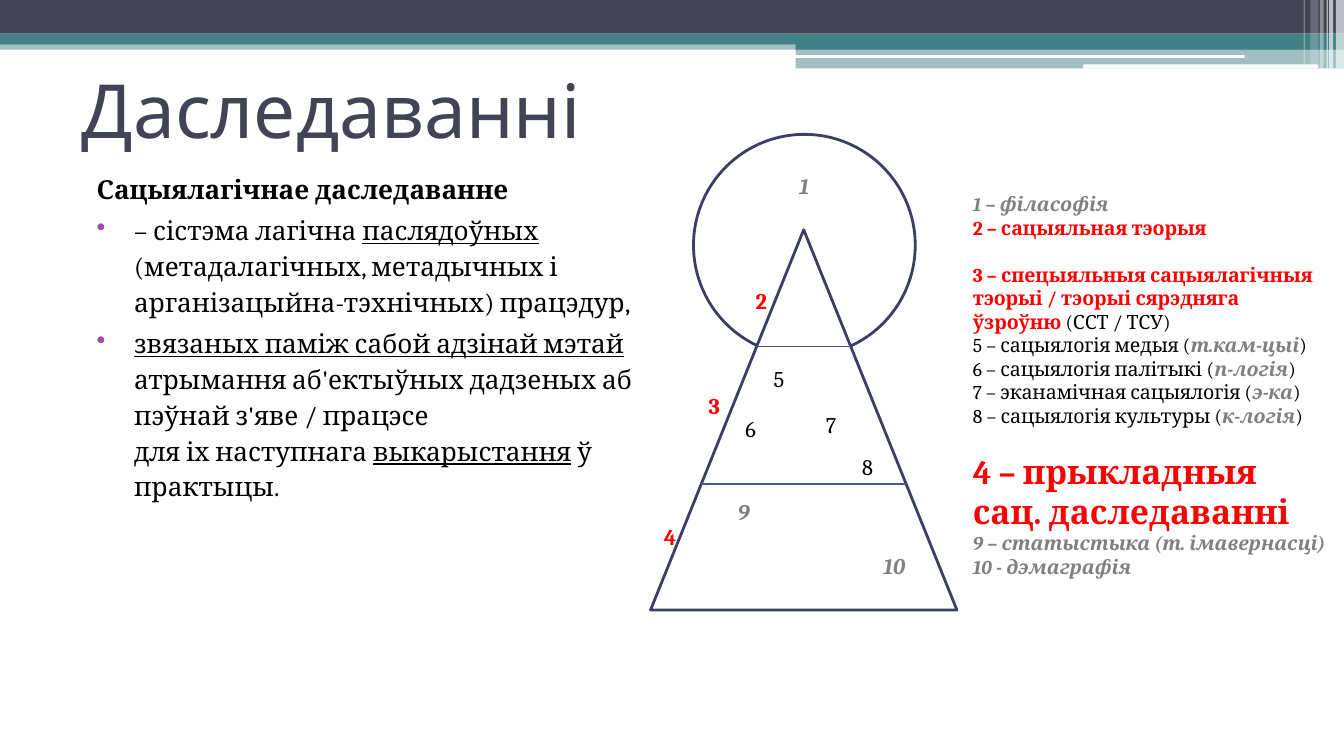
from dataclasses import dataclass
from typing import NamedTuple

from lxml.etree import SubElement
from pptx import Presentation
from pptx.dml.color import RGBColor
from pptx.enum.shapes import MSO_CONNECTOR, MSO_SHAPE
from pptx.enum.text import MSO_ANCHOR, MSO_AUTO_SIZE, PP_ALIGN
from pptx.oxml.ns import qn
from pptx.util import Emu, Inches, Pt

WIDTH = Inches(10)
HEIGHT = Emu(WIDTH * 9 // 16)
CELL = WIDTH / 100  # the grid has 100 columns of square cells


@dataclass(frozen=True)
class Theme:
    dark: str = "424456"
    teal: str = "438086"
    white: str = "FFFFFF"
    outline: str = "3D3E66"
    divider: str = "53548A"
    bullet: str = "A04DA3"
    black: str = "000000"
    red: str = "FF0000"
    gray: str = "808080"
    heading_font: str = "Cabin"
    body_font: str = "Cambria"
    title: float = 40
    body: float = 14
    label: float = 12
    legend: float = 10.5
    accent: float = 18


T = Theme()
PLAIN = {"color": T.black}
BOLD = {"color": T.black, "bold": True}
UNDER = {"color": T.black, "underline": True}
RED = {"color": T.red, "bold": True}
GRAY = {"color": T.gray, "bold": True, "italic": True}


class Box(NamedTuple):
    col: float
    row: float
    cols: float
    rows: float

    def emu(self) -> list[Emu]:
        return [grid(n) for n in self]


class Run(NamedTuple):
    text: str
    style: dict = PLAIN


class Para(NamedTuple):
    runs: list[Run]
    size: float
    format: dict = {}
    margin: float = 0
    hanging: float = 0


class Band(NamedTuple):
    box: Box
    color: str
    alpha: int = 100
    shape: MSO_SHAPE = MSO_SHAPE.RECTANGLE


class Label(NamedTuple):
    text: str
    col: float
    row: float
    style: dict = PLAIN
    cols: float = 3.1


def grid(n: float) -> Emu:
    return Emu(round(n * CELL))


def rgb(color: str) -> RGBColor:
    return RGBColor.from_string(color)


def add_band(shapes, band: Band) -> None:
    sp = shapes.add_shape(band.shape, *band.box.emu())
    sp.shadow.inherit = False
    sp.line.fill.background()
    sp.fill.solid()
    sp.fill.fore_color.rgb = rgb(band.color)
    if band.alpha < 100:
        clr = sp.fill._xPr.find(".//" + qn("a:srgbClr"))
        SubElement(clr, qn("a:alpha"), val=str(band.alpha * 1000))


def add_outline(shapes, kind: MSO_SHAPE, box: Box, fill: str | None = None) -> None:
    sp = shapes.add_shape(kind, *box.emu())
    sp.shadow.inherit = False
    sp.line.color.rgb, sp.line.width = rgb(T.outline), Pt(1.5)
    if fill:
        sp.fill.solid()
        sp.fill.fore_color.rgb = rgb(fill)
    else:
        sp.fill.background()


def add_divider(shapes, cone: Box, row: float) -> None:
    """Draw a level line from one slanted side of the cone to the other."""
    middle = cone.col + cone.cols / 2
    half = cone.cols / 2 * (row - cone.row) / cone.rows
    ends = [grid(n) for n in (middle - half, row, middle + half, row)]
    line = shapes.add_connector(MSO_CONNECTOR.STRAIGHT, *ends)
    line.line.color.rgb, line.line.width = rgb(T.divider), Pt(0.75)
    SubElement(line._element.spPr, qn("a:effectLst"))


def add_run(p, text: str, style: dict, size: float, font: str) -> None:
    r = p.add_run()
    r.text = text
    values = {"name": font, "size": Pt(size), **style}
    r.font.color.rgb = rgb(values.pop("color"))
    for name, value in values.items():
        setattr(r.font, name, value)


def add_text(shapes, box: Box, paras: list[Para], font: str = T.body_font, **frame) -> None:
    tf = shapes.add_textbox(*box.emu()).text_frame
    for name, value in {"word_wrap": True, **frame}.items():
        setattr(tf, name, value)
    for i, para in enumerate(paras):
        p = tf.add_paragraph() if i else tf.paragraphs[0]
        for name, value in para.format.items():
            setattr(p, name, value)
        pPr = p._p.get_or_add_pPr()
        pPr.set("marL", str(grid(para.margin)))
        pPr.set("indent", str(-grid(para.hanging)))
        if para.hanging:
            SubElement(SubElement(pPr, qn("a:buClr")), qn("a:srgbClr"), val=T.bullet)
            SubElement(pPr, qn("a:buChar"), char="•")
        for run in para.runs:
            for n, line in enumerate(run.text.split("\n")):
                if n:
                    p.add_line_break()
                add_run(p, line, run.style, para.size, font)


WHITE = T.white
ROUND = MSO_SHAPE.ROUNDED_RECTANGLE
BANDS = [
    Band(Box(0, 3, 100, 0.7), T.teal, 50),
    Band(Box(0, 0, 100, 2.5), T.dark),
    Band(Box(0, 2.5, 100, 0.8), T.teal),
    Band(Box(59.2, 3, 40.8, 0.7), T.teal),
    Band(Box(59.2, 3.6, 40.8, 1.5), T.teal, 50),
    Band(Box(59.1, 4.1, 33.5, 0.2), WHITE, shape=ROUND),
    Band(Box(80.6, 4.8, 17.5, 0.3), WHITE, shape=ROUND),
    *(Band(Box(col, 0, cols, rows), WHITE, alpha) for col, cols, rows, alpha in [
        (99.4, 0.6, 5.1, 65), (98.9, 0.3, 5.1, 65), (98.7, 0.1, 5.1, 60),
        (98.2, 0.3, 5.1, 40), (97.5, 0.6, 4.8, 20), (97, 0.1, 4.8, 30)]),
]

LABELS = [
    Label("1", 58.3, 12.3, GRAY), Label("2", 55.1, 20.9, RED),
    Label("3", 51.6, 28.7, RED), Label("4", 48.3, 38.4, RED),
    Label("6", 54.3, 30.4), Label("5", 56.4, 26.7),
    Label("7", 60.3, 30.1), Label("8", 63, 33.2),
    Label("9", 53.8, 36.6, GRAY), Label("10", 64.2, 40.6, GRAY, 4.7),
]

ITEM = {"space_before": Pt(3), "line_spacing": 1.14}
BODY = [
    Para([Run("Сацыялагічнае даследаванне", BOLD)], T.body, {"space_before": Pt(3)}, 1.2),
    Para([Run("– сістэма лагічна "), Run("паслядоўных", UNDER),
          Run(" (метадалагічных, метадычных і арганізацыйна-тэхнічных) працэдур,")],
         T.body, ITEM, 4, 2.8),
    Para([Run("звязаных паміж сабой адзінай мэтай ", UNDER),
          Run("атрымання аб'ектыўных дадзеных аб пэўнай з'яве / працэсе \nдля іх наступнага "),
          Run("выкарыстання", UNDER), Run(" ў практыцы.")],
         T.body, ITEM, 4, 2.8),
]

GAP = {"space_before": Pt(T.legend * 1.2)}
BRANCHES = [("5 – сацыялогія медыя", "т.кам-цыі"), ("6 – сацыялогія палітыкі", "п-логія"),
            ("7 – эканамічная сацыялогія", "э-ка"), ("8 – сацыялогія культуры", "к-логія")]
LEGEND = [
    Para([Run("1 – філасофія", GRAY)], T.legend),
    Para([Run("2 – сацыяльная тэорыя", RED)], T.legend),
    Para([Run("3 – спецыяльныя сацыялагічныя тэорыі / тэорыі сярэдняга ўзроўню ", RED),
          Run("(ССТ / ТСУ)")], T.legend, GAP),
    *(Para([Run(f"{name} ("), Run(short, GRAY), Run(")")], T.legend) for name, short in BRANCHES),
    Para([Run("4 – прыкладныя сац. даследаванні", RED)], T.accent, GAP),
    Para([Run("9 – статыстыка (т. імавернасці)", GRAY)], T.legend),
    Para([Run("10 - дэмаграфія", GRAY)], T.legend),
]


def main() -> None:
    prs = Presentation()
    prs.slide_width, prs.slide_height = WIDTH, HEIGHT
    shapes = prs.slides.add_slide(prs.slide_layouts[6]).shapes
    for band in BANDS:
        add_band(shapes, band)

    title = Para([Run("Даследаванні", {"color": T.dark})], T.title)
    add_text(shapes, Box(5.1, 3.7, 90, 8.8), [title], T.heading_font,
             vertical_anchor=MSO_ANCHOR.MIDDLE)
    add_text(shapes, Box(5, 12.4, 45.8, 41.5), BODY)

    figure = shapes.add_group_shape().shapes
    cone = Box(48.4, 17.1, 22.8, 28.3)
    add_outline(figure, MSO_SHAPE.OVAL, Box(51.6, 10, 16.5, 16.5))
    add_outline(figure, MSO_SHAPE.ISOSCELES_TRIANGLE, cone, T.white)
    for row in (36, 25.8):
        add_divider(figure, cone, row)

    grow = {"auto_size": MSO_AUTO_SIZE.SHAPE_TO_FIT_TEXT}
    for label in LABELS:
        para = Para([Run(label.text, label.style)], T.label, {"alignment": PP_ALIGN.CENTER})
        add_text(shapes, Box(label.col, label.row, label.cols, 3), [para], **grow)
    add_text(shapes, Box(71.4, 13.8, 28.7, 33.6), LEGEND, **grow)
    prs.save("out.pptx")


if __name__ == "__main__":
    main()
